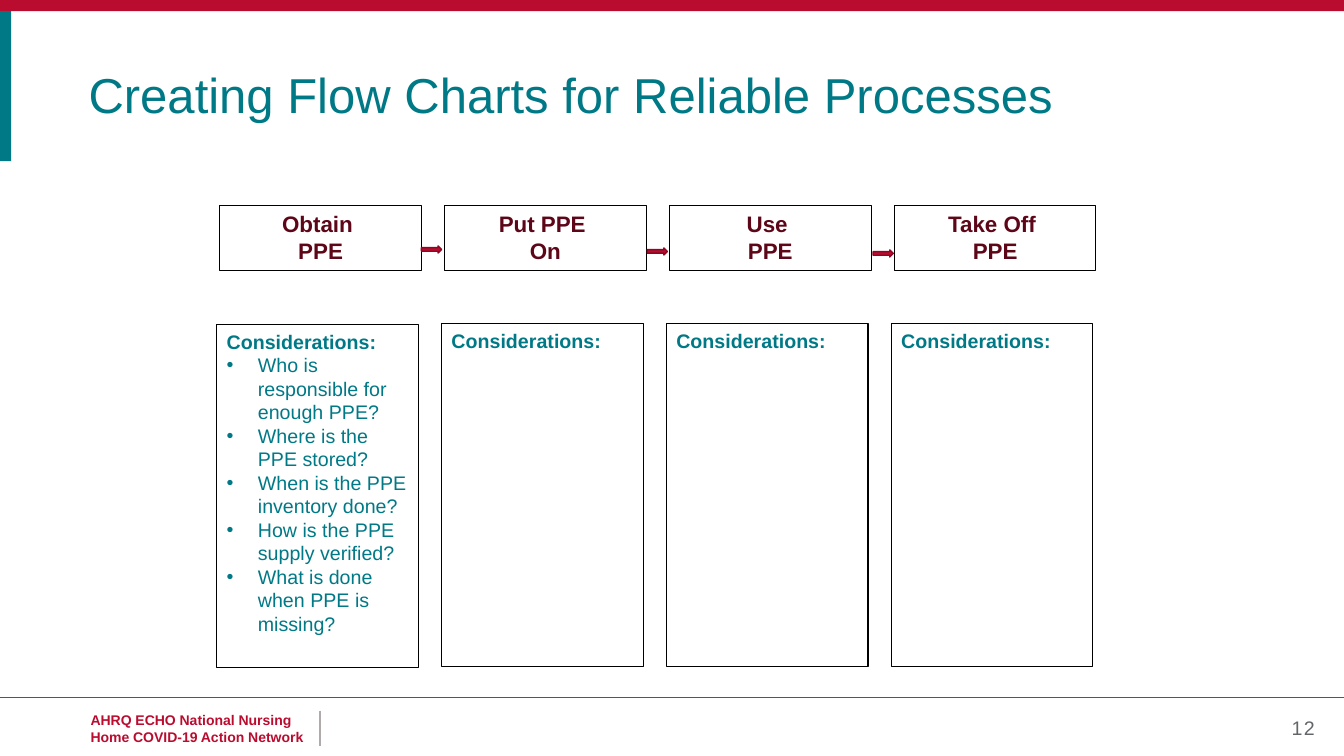
"""Build a slide with a four-step PPE flow chart and considerations for each step."""
from dataclasses import dataclass

from lxml import etree
from pptx import Presentation
from pptx import util as u
from pptx.dml.color import RGBColor
from pptx.enum import shapes, text
from pptx.oxml import ns


@dataclass(frozen=True)
class Theme:
    font: str = "Arial"
    teal: str = "007986"
    red: str = "BA0C2F"
    dark_red: str = "8A0923"
    maroon: str = "5D0618"
    black: str = "000000"
    gray: str = "636669"
    light_gray: str = "AFABAB"
    title_size: int = 35
    step_size: int = 16
    body_size: int = 14
    footer_size: int = 10


theme = Theme()


def add_shape(kind, left, top, width, height, fill=None, line=None, weight=0.75):
    shape = slide.shapes.add_shape(
        kind, u.Inches(left), u.Inches(top), u.Inches(width), u.Inches(height))
    shape.shadow.inherit = False
    for part, color in ((shape.fill, fill), (shape.line.fill, line)):
        if color:
            part.solid()
            part.fore_color.rgb = RGBColor.from_string(color)
        else:
            part.background()
    if line:
        shape.line.width = u.Pt(weight)
    return shape


def write(shape, lines, size, color, bold=False, align=text.PP_ALIGN.LEFT):
    frame = shape.text_frame
    frame.word_wrap = True
    frame.vertical_anchor = text.MSO_ANCHOR.TOP
    for index, line in enumerate(lines):
        paragraph = frame.add_paragraph() if index else frame.paragraphs[0]
        paragraph.alignment = align
        run = paragraph.add_run()
        run.text = line
        run.font.name = theme.font
        run.font.size = u.Pt(size)
        run.font.bold = bold
        run.font.color.rgb = RGBColor.from_string(color)
    return frame.paragraphs


presentation = Presentation()
presentation.slide_width = u.Inches(13.33)
presentation.slide_height = u.Inches(7.5)
slide = presentation.slides.add_slide(presentation.slide_layouts[6])
rectangle = shapes.MSO_SHAPE.RECTANGLE

add_shape(rectangle, 0, 0, 0.11, 1.6, fill=theme.teal)
add_shape(rectangle, 0, 0, 13.33, 0.11, fill=theme.red)

for start_x, start_y, end_x, end_y, color, weight in (
    (0, 6.92, 13.33, 6.92, theme.teal, 0.5),
    (3.17, 7.05, 3.17, 7.4, theme.light_gray, 1.5),
):
    rule = slide.shapes.add_connector(
        shapes.MSO_CONNECTOR.STRAIGHT,
        u.Inches(start_x), u.Inches(start_y), u.Inches(end_x), u.Inches(end_y))
    rule.line.color.rgb = RGBColor.from_string(color)
    rule.line.width = u.Pt(weight)
    etree.SubElement(rule.element.spPr, ns.qn("a:effectLst"))

number_box = slide.shapes.add_textbox(
    u.Inches(8.17), u.Inches(7.05), u.Inches(4.97), u.Inches(0.34))
number = write(number_box, ["12"], theme.body_size, theme.gray,
               align=text.PP_ALIGN.RIGHT)[0]
number.runs[0].font._element.set("spc", "100")

footer_box = slide.shapes.add_textbox(
    u.Inches(0.8), u.Inches(7.01), u.Inches(3.5), u.Inches(0.44))
write(footer_box, ["AHRQ ECHO National Nursing", "Home COVID-19 Action Network"],
      theme.footer_size, theme.red, bold=True)

title_box = slide.shapes.add_textbox(
    u.Inches(0.78), u.Inches(0.66), u.Inches(11.84), u.Inches(0.55))
title = write(title_box, ["Creating Flow Charts for Reliable Processes"],
              theme.title_size, theme.teal)[0]
title.line_spacing = 0.9

questions = [
    "Who is responsible for enough PPE?",
    "Where is the PPE stored?",
    "When is the PPE inventory done?",
    "How is the PPE supply verified?",
    "What is done when PPE is missing?",
]
steps = [
    (["Obtain ", "PPE"], questions),
    (["Put PPE ", "On"], []),
    (["Use ", "PPE"], []),
    (["Take Off ", "PPE"], []),
]
pitch = 2.23

for column, (step, considerations) in enumerate(steps):
    step_box = add_shape(rectangle, 2.18 + column * pitch, 2.04, 2, 0.64,
                         line=theme.black)
    write(step_box, step, theme.step_size, theme.maroon, bold=True,
          align=text.PP_ALIGN.CENTER)

    detail_top = 3.22 if considerations else 3.21
    detail_box = add_shape(rectangle, 2.15 + column * pitch, detail_top, 2, 3.4,
                           line=theme.black)
    paragraphs = write(detail_box, ["Considerations:"] + considerations,
                       theme.body_size, theme.teal)
    paragraphs[0].runs[0].font.bold = True
    for paragraph in paragraphs[1:]:
        properties = paragraph._p.get_or_add_pPr()
        properties.set("marL", str(u.Inches(0.31)))
        properties.set("indent", str(-u.Inches(0.31)))
        etree.SubElement(properties, ns.qn("a:buFont"), typeface=theme.font)
        etree.SubElement(properties, ns.qn("a:buChar"), char="•")

for gap in range(len(steps) - 1):
    add_shape(shapes.MSO_SHAPE.RIGHT_ARROW, 4.18 + gap * 2.24, 2.44 + gap * 0.02,
              0.2, 0.07, fill=theme.red, line=theme.dark_red, weight=1)

presentation.save("out.pptx")
